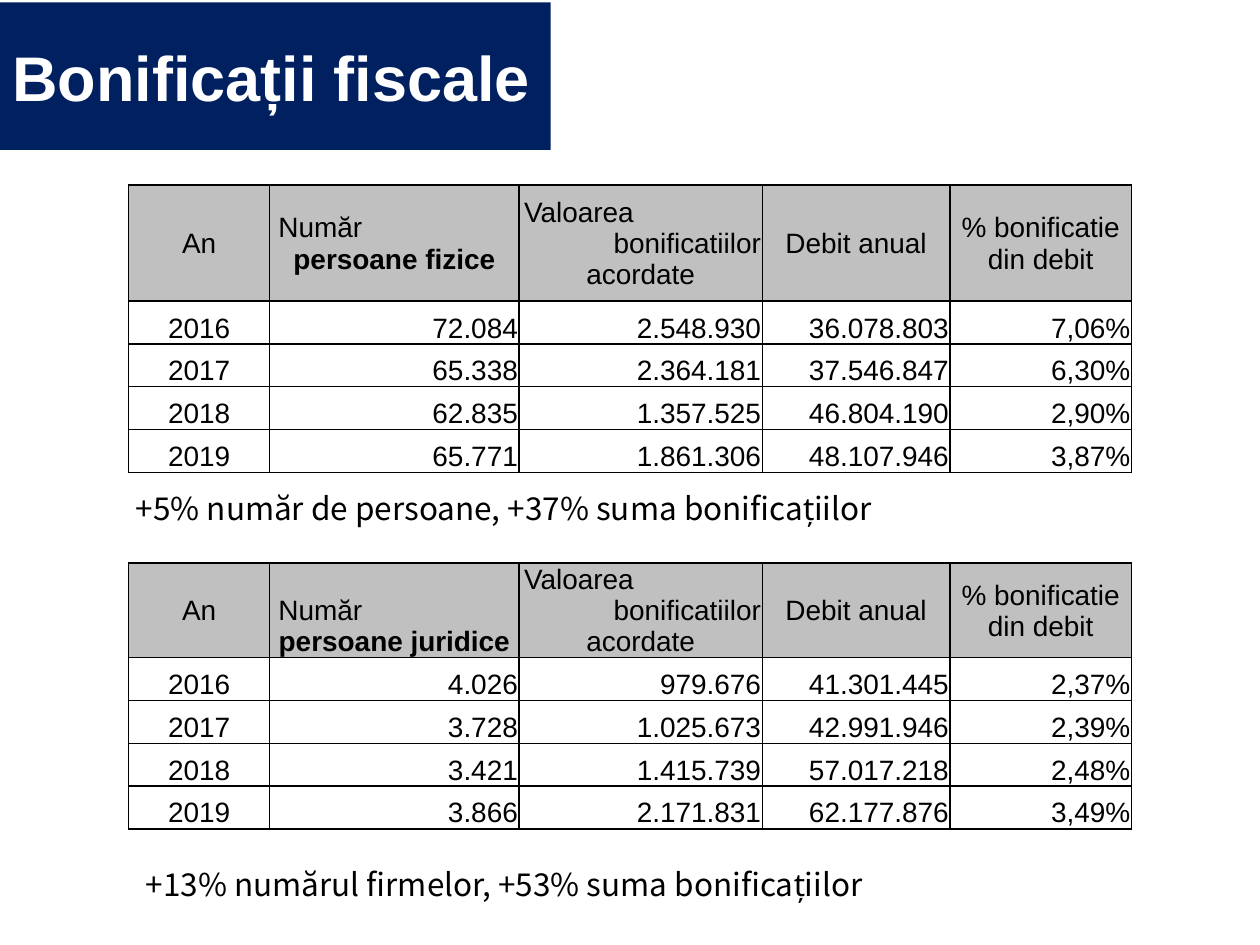
from dataclasses import dataclass

from pptx import Presentation
from pptx.dml.color import RGBColor
from pptx.enum.shapes import MSO_SHAPE as Shape
from pptx.enum.text import MSO_ANCHOR as Anchor, PP_ALIGN as Align
from pptx.oxml import parse_xml
from pptx.oxml.ns import nsdecls
from pptx.util import Inches, Pt

COLORS = {"navy": "002060", "white": "FFFFFF", "black": "000000", "grey": "C0C0C0"}
COLUMN_WIDTHS = [1.12, 1.98, 1.93, 1.49, 1.44]
DATA_HEIGHT = 0.34
GAP_HEIGHT = 0.72


@dataclass
class Line:
    text: str
    align: Align = Align.CENTER
    bold: bool = False
    indent: float = 0


@dataclass
class Section:
    group: str
    header_height: float
    middle_anchor: Anchor
    rows: list[tuple[str, ...]]


@dataclass
class Note:
    text: str
    left: float
    top: float


SECTIONS = [
    Section("persoane fizice", 0.92, Anchor.MIDDLE, [
        ("2016", "72.084", "2.548.930", "36.078.803", "7,06%"),
        ("2017", "65.338", "2.364.181", "37.546.847", "6,30%"),
        ("2018", "62.835", "1.357.525", "46.804.190", "2,90%"),
        ("2019", "65.771", "1.861.306", "48.107.946", "3,87%"),
    ]),
    Section("persoane juridice", 0.55, Anchor.BOTTOM, [
        ("2016", "4.026", "979.676", "41.301.445", "2,37%"),
        ("2017", "3.728", "1.025.673", "42.991.946", "2,39%"),
        ("2018", "3.421", "1.415.739", "57.017.218", "2,48%"),
        ("2019", "3.866", "2.171.831", "62.177.876", "3,49%"),
    ]),
]
NOTES = [
    Note("+5% număr de persoane, +37% suma bonificațiilor", 0.98, 3.83),
    Note("+13% numărul firmelor, +53% suma bonificațiilor", 1.06, 6.82),
]


def color(name: str) -> RGBColor:
    """Return a named colour."""
    return RGBColor.from_string(COLORS[name])


def write(para, text: str, *, size: float, font: str = "Arial", ink: str = "black",
          bold: bool = False, align: Align = Align.LEFT) -> None:
    """Write formatted text into a paragraph."""
    para.alignment = align
    span = para.add_run()
    span.text = text
    span.font.size = Pt(size)
    span.font.name = font
    span.font.bold = bold
    span.font.color.rgb = color(ink)


def add_borders(cell, sides: str) -> None:
    """Draw black borders on the given sides and none on the others."""
    properties = cell._tc.get_or_add_tcPr()
    for side in "LRTB":
        paint = "<a:noFill/>"
        if side in sides:
            paint = f'<a:solidFill><a:srgbClr val="{COLORS["black"]}"/></a:solidFill>'
        properties.append(parse_xml(
            f'<a:ln{side} {nsdecls("a")} w="{Pt(1)}">{paint}</a:ln{side}>'))


def fill_cell(cell, lines: list[Line], anchor: Anchor, shaded: bool = False) -> None:
    """Fill a bordered table cell with lines of text."""
    add_borders(cell, "LRTB")
    if shaded:
        cell.fill.solid()
        cell.fill.fore_color.rgb = color("grey")
    else:
        cell.fill.background()
    cell.margin_left = cell.margin_right = cell.margin_top = Inches(0.01)
    cell.margin_bottom = 0
    cell.vertical_anchor = anchor
    frame = cell.text_frame
    for index, line in enumerate(lines):
        para = frame.add_paragraph() if index else frame.paragraphs[0]
        if line.indent:
            para._p.get_or_add_pPr().set("marL", str(Inches(line.indent)))
        write(para, line.text, size=16, bold=line.bold, align=line.align)


def fill_section(table, first_row: int, section: Section) -> None:
    """Fill the header and the yearly rows of one section."""
    middle, anchor = Anchor.MIDDLE, section.middle_anchor
    headers = [
        ([Line("An")], middle),
        ([Line("Număr", Align.LEFT, indent=0.06), Line(section.group, bold=True)], anchor),
        ([Line("Valoarea", Align.LEFT, indent=0.03), Line("bonificatiilor", Align.RIGHT),
          Line("acordate")], anchor),
        ([Line("Debit anual")], middle),
        ([Line("% bonificatie din debit")], middle),
    ]
    table.rows[first_row].height = Inches(section.header_height)
    for column, (lines, header_anchor) in enumerate(headers):
        fill_cell(table.cell(first_row, column), lines, header_anchor, shaded=True)
    for row, values in enumerate(section.rows, first_row + 1):
        table.rows[row].height = Inches(DATA_HEIGHT)
        for column, value in enumerate(values):
            align = Align.RIGHT if column else Align.CENTER
            fill_cell(table.cell(row, column), [Line(value, align)], Anchor.BOTTOM)


def add_bonus_table(page) -> None:
    """Add the table with both sections and an open row between them."""
    data_rows = sum(len(section.rows) for section in SECTIONS)
    height = (sum(section.header_height for section in SECTIONS)
              + data_rows * DATA_HEIGHT + GAP_HEIGHT)
    table = page.shapes.add_table(
        data_rows + 3, len(COLUMN_WIDTHS), Inches(1.02), Inches(1.47),
        Inches(sum(COLUMN_WIDTHS)), Inches(height)).table
    table.first_row = table.horz_banding = False
    for column, width in zip(table.columns, COLUMN_WIDTHS):
        column.width = Inches(width)
    upper, lower = SECTIONS
    gap_row = len(upper.rows) + 1
    fill_section(table, 0, upper)
    table.rows[gap_row].height = Inches(GAP_HEIGHT)
    for cell in table.rows[gap_row].cells:
        add_borders(cell, "TB")
        cell.fill.background()
    fill_section(table, gap_row + 1, lower)


def add_title(page) -> None:
    """Add the title on its navy block."""
    box = page.shapes.add_shape(
        Shape.RECTANGLE, 0, Inches(0.02), Inches(4.37), Inches(1.17))
    box.shadow.inherit = False
    box.fill.solid()
    box.fill.fore_color.rgb = color("navy")
    box.line.fill.background()
    box.text_frame.word_wrap = True
    box.text_frame.vertical_anchor = Anchor.MIDDLE
    write(box.text_frame.paragraphs[0], "Bonificații fiscale",
          size=36, ink="white", bold=True)


def add_note(page, note: Note) -> None:
    """Add a one-line summary."""
    box = page.shapes.add_textbox(
        Inches(note.left), Inches(note.top), Inches(8.5), Inches(0.4))
    box.text_frame.word_wrap = True
    write(box.text_frame.paragraphs[0], note.text, size=18, font="Noto Sans CJK KR")


def main() -> None:
    """Build the slide and save it."""
    deck = Presentation()
    deck.slide_width, deck.slide_height = Inches(10), Inches(7.5)
    page = deck.slides.add_slide(deck.slide_layouts[6])
    add_title(page)
    add_bonus_table(page)
    for note in NOTES:
        add_note(page, note)
    deck.save("out.pptx")


if __name__ == "__main__":
    main()
